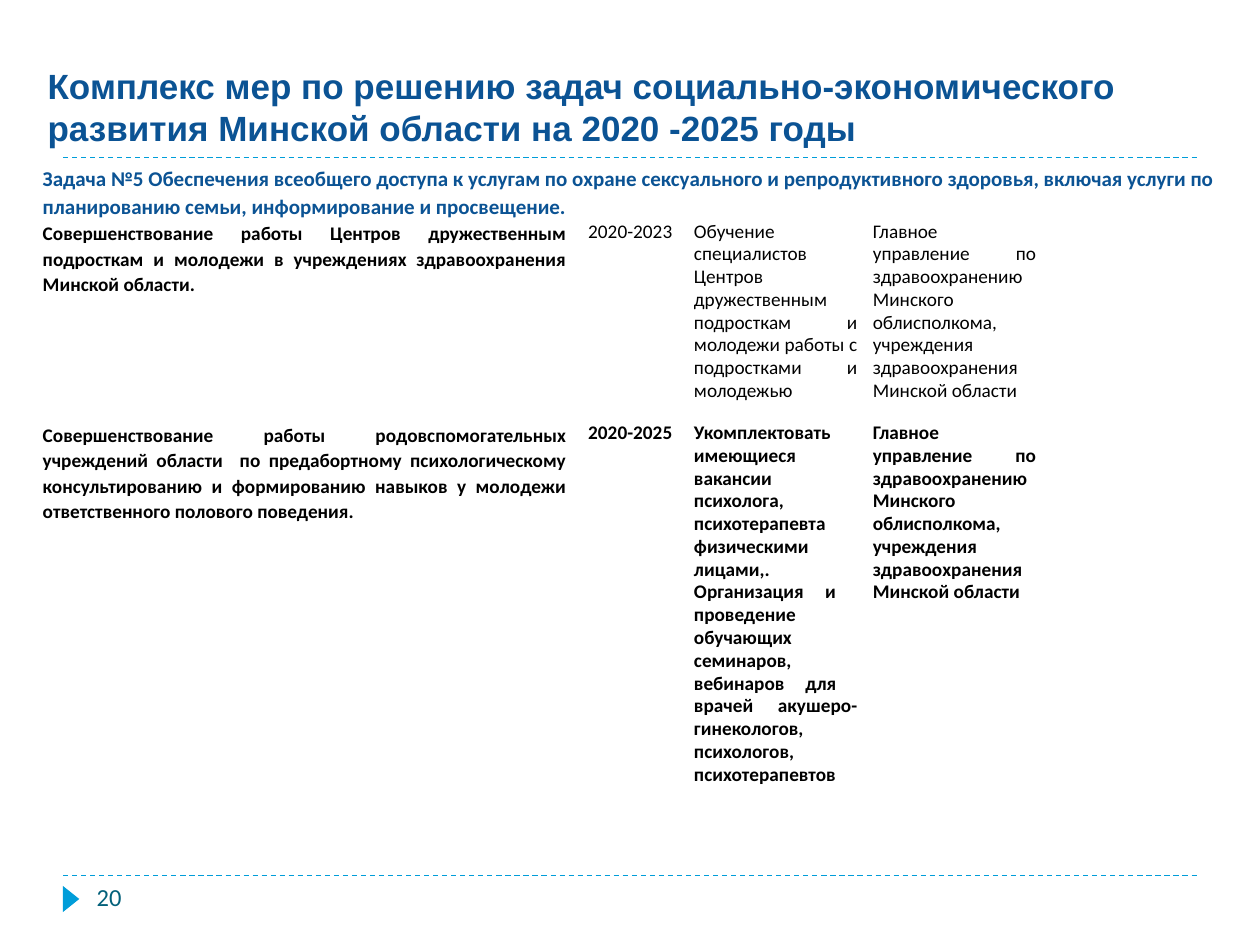
from pptx import Presentation
from pptx.dml.color import RGBColor
from pptx.enum.dml import MSO_LINE
from pptx.enum.shapes import MSO_CONNECTOR, MSO_SHAPE
from pptx.enum.text import MSO_ANCHOR, MSO_AUTO_SIZE, PP_ALIGN
from pptx.oxml import parse_xml
from pptx.oxml.ns import nsdecls
from pptx.util import Pt

STRAIGHT = MSO_CONNECTOR.STRAIGHT
DASH = MSO_LINE.DASH
TRIANGLE = MSO_SHAPE.ISOSCELES_TRIANGLE
BOTTOM = MSO_ANCHOR.BOTTOM
NO_AUTOFIT = MSO_AUTO_SIZE.NONE
LEFT, CENTER, JUSTIFY = PP_ALIGN.LEFT, PP_ALIGN.CENTER, PP_ALIGN.JUSTIFY
TITLE_ONLY = 5
ACCENT, HEADING, NUMBER, BLACK = "009DD9", "0B5394", "04617B", "000000"


def color(hex_value):
    return RGBColor.from_string(hex_value)


def write(text_frame, texts, font_format, paragraph_format):
    """Fill a text frame with one formatted paragraph per text."""
    for index, text in enumerate(texts):
        paragraph = text_frame.paragraphs[0] if index == 0 else text_frame.add_paragraph()
        for name, value in paragraph_format.items():
            setattr(paragraph, name, value)
        run = paragraph.add_run()
        run.text = text
        for name, value in font_format.items():
            if name == "color":
                run.font.color.rgb = color(value)
            else:
                setattr(run.font, name, value)


presentation = Presentation()
presentation.slide_width, presentation.slide_height = Pt(720), Pt(540)
slide = presentation.slides.add_slide(presentation.slide_layouts[TITLE_ONLY])

# Dashed rules under the title and above the footer
for y in (90, 500.4):
    rule = slide.shapes.add_connector(STRAIGHT, Pt(36), Pt(y), Pt(684), Pt(y))
    rule.line.color.rgb = color(ACCENT)
    rule.line.width = Pt(0.75)
    rule.line.dash_style = DASH
    rule._element.spPr.append(parse_xml(f"<a:effectLst {nsdecls('a')}/>"))

# Footer marker and slide number
marker = slide.shapes.add_shape(TRIANGLE, Pt(33.1), Pt(509), Pt(15), Pt(9.4))
marker.rotation = 90
marker.shadow.inherit = False
marker.fill.solid()
marker.fill.fore_color.rgb = color(ACCENT)
marker.line.fill.background()

number_box = slide.shapes.add_textbox(Pt(48.2), Pt(500.4), Pt(156), Pt(28.8))
number_box.text_frame.word_wrap = True
write(number_box.text_frame, ["20"],
      {"size": Pt(14), "name": "Calibri", "color": NUMBER}, {"alignment": LEFT})

# Title
title = slide.shapes.title
title.left, title.top, title.width, title.height = Pt(20), Pt(10.8), Pt(648), Pt(77.8)
title.text_frame.vertical_anchor = BOTTOM
title.text_frame.auto_size = NO_AUTOFIT
write(title.text_frame,
      ["Комплекс мер по решению задач социально-экономического развития "
       "Минской области на 2020 -2025 годы"],
      {"size": Pt(20), "name": "Arial", "bold": True, "color": HEADING},
      {"alignment": LEFT})

# Table contents: rows of cells, each cell a list of paragraphs
task = ("Задача №5 Обеспечения всеобщего доступа к услугам по охране сексуального и "
        "репродуктивного здоровья, включая услуги по планированию семьи, "
        "информирование и просвещение.")
responsible = [
    "Главное управление по здравоохранению",
    "Минского облисполкома, учреждения здравоохранения Минской области",
]
rows = [
    [[task], [], [], [], []],
    [
        ["Совершенствование работы Центров дружественным подросткам и молодежи "
         "в учреждениях здравоохранения Минской области."],
        ["2020-2023"],
        ["Обучение специалистов  Центров дружественным подросткам и молодежи "
         "работы с подростками и молодежью"],
        responsible,
        [],
    ],
    [
        ["Совершенствование работы родовспомогательных учреждений области  по "
         "предабортному психологическому консультированию и формированию навыков "
         "у молодежи ответственного полового поведения."],
        ["2020-2025"],
        ["Укомплектовать имеющиеся вакансии психолога, психотерапевта  физическими "
         "лицами,. Организация и  проведение обучающих семинаров, вебинаров для  "
         "врачей акушеро-гинекологов, психологов, психотерапевтов"],
        responsible,
        [],
    ],
]
column_widths = [308.2, 64, 102.2, 102.2, 102.2]
row_heights = [31.7, 115.2, 230.4]

# Table grid
table = slide.shapes.add_table(len(rows), len(column_widths), Pt(20), Pt(94.3),
                               Pt(sum(column_widths)), Pt(sum(row_heights))).table
table.first_row = table.horz_banding = False
for column, width in zip(table.columns, column_widths):
    column.width = Pt(width)
for row, height in zip(table.rows, row_heights):
    row.height = Pt(height)
table.cell(0, 0).merge(table.cell(0, len(column_widths) - 1))

# Table cells
cell_margins = {"margin_left": Pt(4.4), "margin_right": Pt(4.4),
                "margin_top": 0, "margin_bottom": 0}
for row_index, row in enumerate(rows):
    for column_index, texts in enumerate(row):
        cell = table.cell(row_index, column_index)
        for name, value in cell_margins.items():
            setattr(cell, name, value)

        # White borders, heavier below the heading row
        borders = {"lnL": 1, "lnR": 1, "lnT": 3 if row_index == 1 else 1,
                   "lnB": 3 if row_index == 0 else 1}
        for tag, width in borders.items():
            cell._tc.get_or_add_tcPr().append(parse_xml(
                f'<a:{tag} {nsdecls("a")} w="{Pt(width)}"><a:solidFill>'
                f'<a:srgbClr val="FFFFFF"/></a:solidFill></a:{tag}>'))
        cell.fill.background()

        is_heading = row_index == 0
        is_measure = column_index == 0
        write(cell.text_frame, texts,
              {"size": Pt(12 if is_heading else 11), "name": "Calibri",
               "bold": is_measure or row_index == 2,
               "color": HEADING if is_heading else BLACK},
              {"alignment": CENTER if column_index == 1 else JUSTIFY,
               "line_spacing": 1.07 if is_measure else Pt(13)})

presentation.save("out.pptx")
